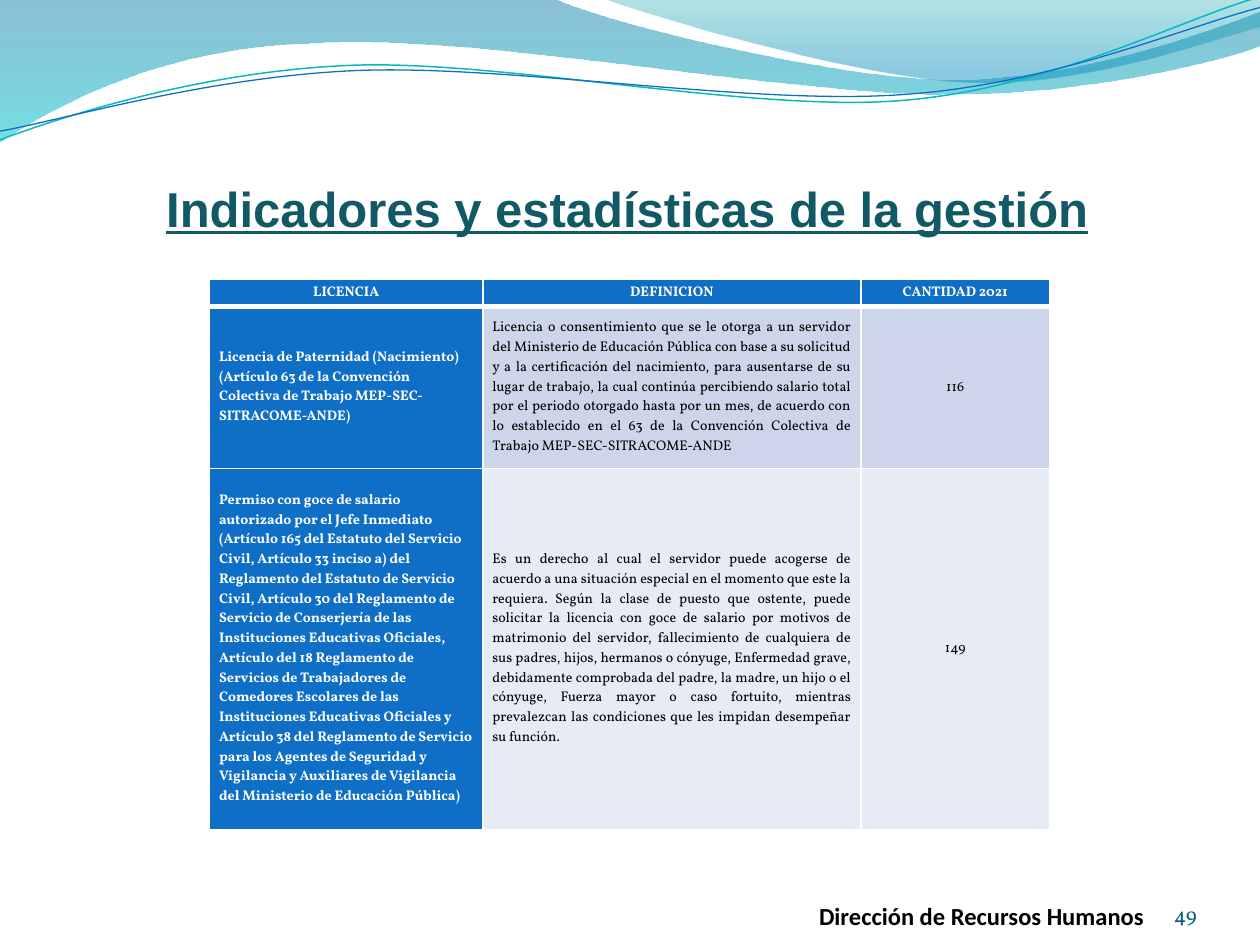
from lxml import etree
from pptx import Presentation
from pptx.dml.color import RGBColor
from pptx.enum.text import MSO_ANCHOR, PP_ALIGN
from pptx.oxml.ns import qn
from pptx.util import Pt

LEFT, CENTER, RIGHT, JUSTIFY = PP_ALIGN.LEFT, PP_ALIGN.CENTER, PP_ALIGN.RIGHT, PP_ALIGN.JUSTIFY
TOP, MIDDLE, BOTTOM = MSO_ANCHOR.TOP, MSO_ANCHOR.MIDDLE, MSO_ANCHOR.BOTTOM
TITLE_ONLY = 5
BLUE, WHITE, BLACK = "0F6FC6", "FFFFFF", "000000"

BANDS = [
    ([(0, 0), (316.8, -0.7), (342.7, 12.2, 478.1, 45.4, 545.8, 45.4),
      (614.2, 45.4, 689.8, 18.7, 720, 6.5), (720.7, 25.9),
      (707.8, 31.7, 626.4, 54.7, 537.1, 54), (447.8, 54, 275, 20.2, 185, 24.5),
      (92.9, 25.9, 33.1, 59.8, -0.7, 81.4), (0, 0)],
     [(0, "0074A1", 45), (1, "00C6CF", 55)]),
    ([(344.9, -0.7), (366.5, 7.9, 491, 44.6, 553.7, 46.8),
      (616.3, 49.7, 691.9, 23, 720, 15.1), (720, 0), (344.9, -0.7)],
     [(0, "00A1A9", 30), (0.8, "008BBF", 45)]),
]
STRANDS = [
    ([(0, 79.9), (34.6, 67, 113.8, 41, 199.4, 37.4),
      (284.4, 33.8, 427, 64.1, 513.4, 57.6), (599.8, 51.1, 675.4, 10.8, 718.6, -1.4)],
     "0AB8BF", 0.85),
    ([(0, 74.9), (33.8, 69.1, 118.1, 43.9, 203.8, 40.3),
      (290.2, 36.7, 429.8, 60.5, 516.2, 54), (601.9, 48.2, 677.5, 15.1, 720, 4.3)],
     BLUE, 0.75),
]

HEADERS = ["LICENCIA", "DEFINICION", "CANTIDAD 2021"]
LICENCES = [
    ("Licencia de Paternidad (Nacimiento) (Artículo 63 de la Convención Colectiva de Trabajo "
     "MEP-SEC-SITRACOME-ANDE)",
     "Licencia o consentimiento que se le otorga a un servidor del Ministerio de Educación Pública "
     "con base a su solicitud y a la certificación del nacimiento, para ausentarse de su lugar de "
     "trabajo, la cual continúa percibiendo salario total por el periodo otorgado hasta por un mes, "
     "de acuerdo con lo establecido en el 63 de la Convención Colectiva de Trabajo "
     "MEP-SEC-SITRACOME-ANDE",
     "116"),
    ("Permiso con goce de salario autorizado por el Jefe Inmediato (Artículo 165 del Estatuto del "
     "Servicio Civil, Artículo 33 inciso a) del Reglamento del Estatuto de Servicio Civil, Artículo "
     "30 del Reglamento de Servicio de Conserjería de las Instituciones Educativas Oficiales, "
     "Artículo del 18 Reglamento de Servicios de Trabajadores de Comedores Escolares de las "
     "Instituciones Educativas Oficiales y Artículo 38 del Reglamento de Servicio para los Agentes "
     "de Seguridad y Vigilancia y Auxiliares de Vigilancia del Ministerio de Educación Pública)",
     "Es un derecho al cual el servidor puede acogerse de acuerdo a una situación especial en el "
     "momento que este la requiera. Según la clase de puesto que ostente, puede solicitar la "
     "licencia con goce de salario por motivos de matrimonio del servidor, fallecimiento de "
     "cualquiera de sus padres, hijos, hermanos o cónyuge, Enfermedad grave, debidamente comprobada "
     "del padre, la madre, un hijo o el cónyuge, Fuerza mayor o caso fortuito, mientras prevalezcan "
     "las condiciones que les impidan desempeñar su función.",
     "149"),
]
COLUMN_WIDTHS = [156.2, 216, 107.8]
ROW_HEIGHTS = [15.8, 92.5, 206.3]
BAND_FILLS = ["CCD5EA", "E7EBF5"]


def color(value):
    """Turn a hex string into a colour."""
    return RGBColor.from_string(value)


def add_outline(slide, segments, left, top, close):
    """Draw an outline whose six-number segments are cubic curves."""
    points = [(Pt(left + segment[i]), Pt(top + segment[i + 1]))
              for segment in segments for i in range(0, len(segment), 2)]
    builder = slide.shapes.build_freeform(*points[0], scale=1.0)
    builder.add_line_segments(points[1:], close=close)
    shape = builder.convert_to_shape()
    shape.shadow.inherit = False
    lines = iter(list(shape._element.iter(qn("a:lnTo"))))
    for segment in segments[1:]:
        line = next(lines)
        if len(segment) == 6:
            curve = etree.Element(qn("a:cubicBezTo"))
            line.addprevious(curve)
            for step in (line, next(lines), next(lines)):
                curve.append(step[0])
                step.getparent().remove(step)
    return shape


def add_waves(slide, left, top):
    """Draw the translucent bands and thin strands along the top."""
    for segments, stops in BANDS:
        shape = add_outline(slide, segments, left, top, True)
        shape.line.fill.background()
        shape.fill.gradient()
        shape.fill.gradient_angle = 270
        for stop, (position, value, _) in zip(shape.fill.gradient_stops, stops):
            stop.position = position
            stop.color.rgb = color(value)
        for element, (_, _, opacity) in zip(shape._element.iter(qn("a:srgbClr")), stops):
            etree.SubElement(element, qn("a:alpha"), val=str(opacity * 1000))
    for segments, value, width in STRANDS:
        shape = add_outline(slide, segments, left, top, False)
        shape.fill.background()
        shape.line.color.rgb = color(value)
        shape.line.width = Pt(width)


def format_paragraph(paragraph, text, name, size, value, alignment=LEFT, bold=False):
    """Fill a paragraph and set its font."""
    paragraph.text = text
    paragraph.alignment = alignment
    font = paragraph.font
    font.name, font.size, font.bold = name, Pt(size), bold
    font.color.rgb = color(value)


def format_frame(frame, anchor, margins):
    """Set the anchor and the left, top, right and bottom margins."""
    frame.word_wrap = True
    frame.vertical_anchor = anchor
    (frame.margin_left, frame.margin_top,
     frame.margin_right, frame.margin_bottom) = [Pt(margin) for margin in margins]


def add_title(slide, left, top, width, height):
    """Place and format the title placeholder."""
    title = slide.shapes.title
    title.left, title.top, title.width, title.height = map(Pt, (left, top, width, height))
    format_frame(title.text_frame, TOP, (7.2, 3.6, 7.2, 3.6))
    paragraph = title.text_frame.paragraphs[0]
    format_paragraph(paragraph, "Indicadores y estadísticas de la gestión",
                     "Arial", 28, "115964", bold=True)
    paragraph.font.underline = True


def set_borders(cell, top, bottom):
    """Give a cell white borders, 1 point at the sides."""
    properties = cell._tc.get_or_add_tcPr()
    for index, (side, width) in enumerate(zip("LRTB", (1, 1, top, bottom))):
        line = etree.Element(qn(f"a:ln{side}"), w=str(Pt(width)))
        fill = etree.SubElement(line, qn("a:solidFill"))
        etree.SubElement(fill, qn("a:srgbClr"), val=WHITE)
        properties.insert(index, line)


def add_licence_table(slide, left, top):
    """Add the table of licences, definitions and quantities."""
    rows = [HEADERS, *LICENCES]
    table = slide.shapes.add_table(len(rows), len(HEADERS), Pt(left), Pt(top),
                                   Pt(sum(COLUMN_WIDTHS)), Pt(sum(ROW_HEIGHTS))).table
    for column, width in zip(table.columns, COLUMN_WIDTHS):
        column.width = Pt(width)
    for row, height in zip(table.rows, ROW_HEIGHTS):
        row.height = Pt(height)
    for i, texts in enumerate(rows):
        for j, text in enumerate(texts):
            cell = table.cell(i, j)
            heading = i == 0 or j == 0
            cell.vertical_anchor = MIDDLE
            cell.margin_left = cell.margin_right = Pt(5.4)
            cell.margin_top = cell.margin_bottom = 0
            cell.fill.solid()
            cell.fill.fore_color.rgb = color(BLUE if heading else BAND_FILLS[i - 1])
            set_borders(cell, 3 if i == 1 else 1, 3 if i == 0 else 1)
            alignment = CENTER if i == 0 else (LEFT, JUSTIFY, CENTER)[j]
            format_paragraph(cell.text_frame.paragraphs[0], text, "Vollkorn", 8,
                             WHITE if heading else BLACK, alignment, heading)


def add_footer(slide, left, top, width, height):
    """Add the department name and the page number."""
    number_width = 60
    department = slide.shapes.add_textbox(Pt(left), Pt(top + 2), Pt(width), Pt(height))
    format_frame(department.text_frame, BOTTOM, (0, 3.6, 0, 0))
    format_paragraph(department.text_frame.paragraphs[0], "Dirección de Recursos Humanos",
                     "Calibri", 14, BLACK, bold=True)
    number = slide.shapes.add_textbox(Pt(left + width - number_width), Pt(top),
                                      Pt(number_width), Pt(height))
    format_frame(number.text_frame, BOTTOM, (0, 0, 0, 0))
    format_paragraph(number.text_frame.paragraphs[0], "49", "Vollkorn", 12, "045D75", RIGHT)


def main():
    """Build and save the slide."""
    presentation = Presentation()
    presentation.slide_width, presentation.slide_height = Pt(720), Pt(540)
    slide = presentation.slides.add_slide(presentation.slide_layouts[TITLE_ONLY])
    add_waves(slide, 0, 0)
    add_footer(slide, 468, 500.7, 215.8, 28.8)
    add_title(slide, 87.8, 98.3, 544.3, 41)
    add_licence_table(slide, 119.8, 159.4)
    presentation.save("out.pptx")


if __name__ == "__main__":
    main()
